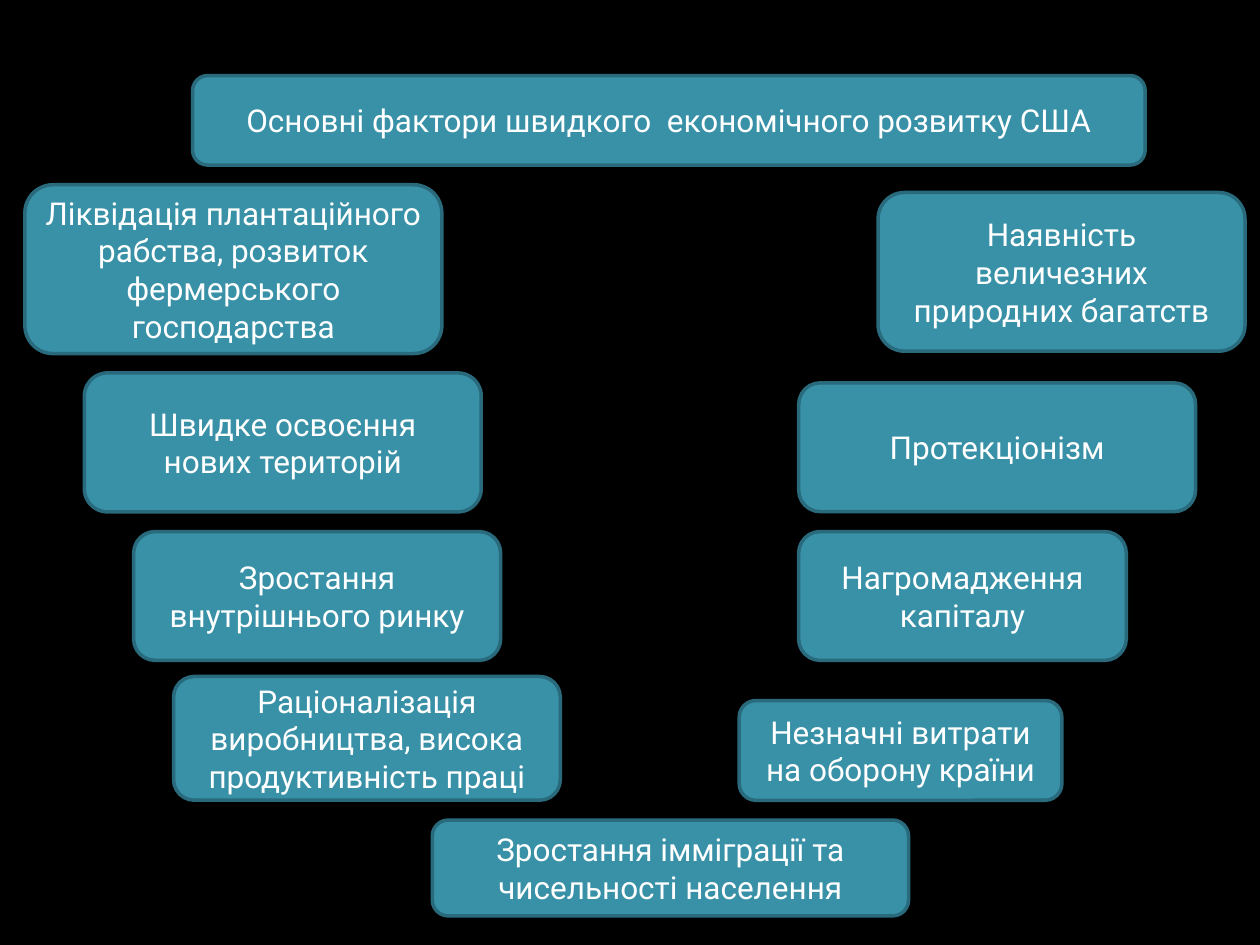
import pptx
import pptx.util
import pptx.dml.color
import pptx.enum.shapes
import pptx.enum.text

Pt = pptx.util.Pt
COLORS = {"background": "000000", "box": "3891A7", "border": "296B7C", "text": "FFFFFF"}
FONT = "Roboto"
TITLE = "Основні фактори швидкого  економічного розвитку США"
TITLE_BOX = (110.1, 43.2, 544.3, 51.1)
FACTORS = [
    ("Ліквідація плантаційного рабства, розвиток фермерського господарства", (14.2, 105.6, 238.3, 96.5)),
    ("Швидке освоєння нових територій", (48.2, 213.1, 226.8, 79.4)),
    ("Зростання внутрішнього ринку", (76.4, 303.8, 209.7, 73.6)),
    ("Раціоналізація виробництва, висока продуктивність праці", (99.2, 386.6, 221, 70.7)),
    ("Наявність величезних природних багатств", (501.8, 110, 209.7, 90.7)),
    ("Протекціонізм", (456.4, 218.8, 226.8, 73.6)),
    ("Нагромадження капіталу", (456.4, 303.8, 187.2, 73.6)),
    ("Незначні витрати на оборону країни", (422.4, 400.3, 184.4, 57)),
    ("Зростання імміграції та чисельності населення", (247, 468.6, 272.2, 54.8)),
]


def rgb(name):
    """Return the named colour."""
    return pptx.dml.color.RGBColor.from_string(COLORS[name])


def write_text(sp, text, size=18, color="text", font=FONT, bold=False):
    """Put centred, formatted text in a shape."""
    tf = sp.text_frame
    tf.word_wrap = True
    tf.auto_size = pptx.enum.text.MSO_AUTO_SIZE.NONE
    tf.vertical_anchor = pptx.enum.text.MSO_ANCHOR.MIDDLE
    p = tf.paragraphs[0]
    p.alignment = pptx.enum.text.PP_ALIGN.CENTER
    p.line_spacing = 1.0
    r = p.add_run()
    r.text = text
    r.font.name = font
    r.font.size = Pt(size)
    r.font.bold = bold
    r.font.color.rgb = rgb(color)


def add_box(s, bounds):
    """Add a rounded, outlined box."""
    kind = pptx.enum.shapes.MSO_SHAPE.ROUNDED_RECTANGLE
    sp = s.shapes.add_shape(kind, *map(Pt, bounds))
    sp.shadow.inherit = False
    sp.fill.solid()
    sp.fill.fore_color.rgb = rgb("box")
    sp.line.color.rgb = rgb("border")
    sp.line.width = Pt(2)
    return sp


def set_title(s, text, bounds):
    """Place and format the title placeholder."""
    sp = s.shapes.title
    sp.left, sp.top, sp.width, sp.height = map(Pt, bounds)
    write_text(sp, text)
    s.shapes._spTree.append(sp._element)


def main():
    """Build the slide of growth factors."""
    prs = pptx.Presentation()
    prs.slide_width, prs.slide_height = Pt(720), Pt(540)
    s = prs.slides.add_slide(prs.slide_layouts[5])
    s.background.fill.solid()
    s.background.fill.fore_color.rgb = rgb("background")
    add_box(s, TITLE_BOX)
    set_title(s, TITLE, TITLE_BOX)
    for text, bounds in FACTORS:
        write_text(add_box(s, bounds), text)
    prs.save("out.pptx")


main()
